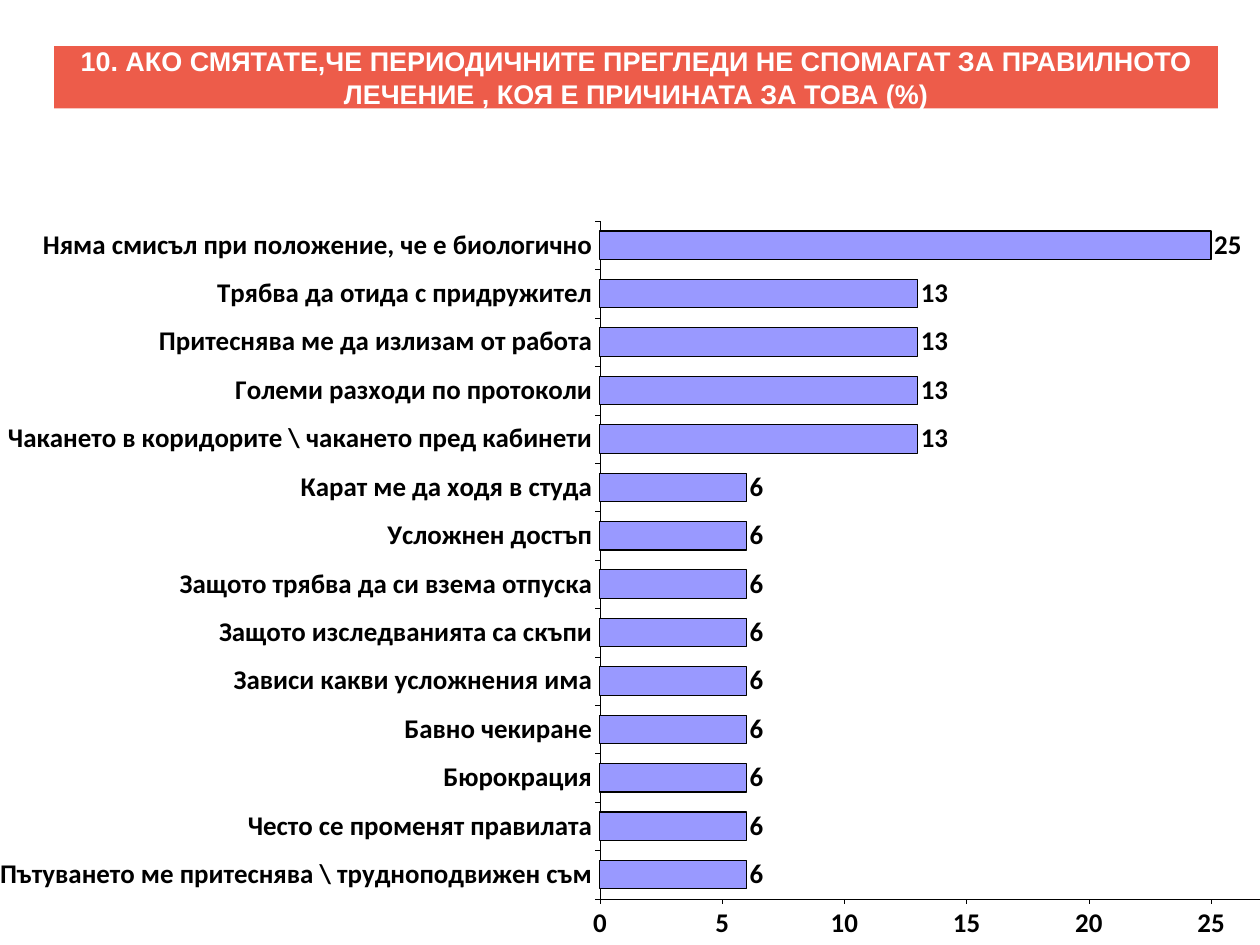
from lxml import etree
from pptx import Presentation
from pptx.chart.data import CategoryChartData
from pptx.dml.color import RGBColor
from pptx.enum.chart import XL_CHART_TYPE, XL_LABEL_POSITION, XL_TICK_MARK
from pptx.enum.shapes import MSO_SHAPE
from pptx.enum.text import MSO_ANCHOR, PP_ALIGN
from pptx.oxml.ns import qn
from pptx.util import Inches, Pt

BAR_CLUSTERED = XL_CHART_TYPE.BAR_CLUSTERED
OUTSIDE_END = XL_LABEL_POSITION.OUTSIDE_END
TICK_OUTSIDE = XL_TICK_MARK.OUTSIDE
TICK_NONE = XL_TICK_MARK.NONE
RECTANGLE = MSO_SHAPE.RECTANGLE
MIDDLE = MSO_ANCHOR.MIDDLE
CENTER = PP_ALIGN.CENTER

TITLE = ("10. АКО СМЯТАТЕ,ЧЕ ПЕРИОДИЧНИТЕ ПРЕГЛЕДИ НЕ СПОМАГАТ ЗА ПРАВИЛНОТО "
         "ЛЕЧЕНИЕ , КОЯ Е ПРИЧИНАТА ЗА ТОВА (%)")
REASONS = [
    ("Пътуването ме притеснява \\ трудноподвижен съм", 6),
    ("Често се променят правилата", 6),
    ("Бюрокрация", 6),
    ("Бавно чекиране", 6),
    ("Зависи какви усложнения има", 6),
    ("Защото изследванията са скъпи", 6),
    ("Защото трябва да си взема отпуска", 6),
    ("Усложнен достъп", 6),
    ("Карат ме да ходя в студа", 6),
    ("Чакането в коридорите \\ чакането пред кабинети", 13),
    ("Големи разходи по протоколи", 13),
    ("Притеснява ме да излизам от работа", 13),
    ("Трябва да отида с придружител", 13),
    ("Няма смисъл при положение, че е биологично", 25),
]


def color(hex_text):
    """Return the colour for a hex string."""
    return RGBColor.from_string(hex_text)


def format_font(font, name, size, hex_text, bold=True):
    """Set the typeface, size, colour and weight of a font."""
    font.name = name
    font.size = Pt(size)
    font.bold = bold
    font.color.rgb = color(hex_text)


def write_text(para, text, align=CENTER, **font_format):
    """Add text to a paragraph with the given format."""
    para.alignment = align
    span = para.add_run()
    span.text = text
    format_font(span.font, **font_format)


def set_line(line, hex_text, width):
    """Give a line a solid colour and a width in points."""
    line.color.rgb = color(hex_text)
    line.width = Pt(width)


def set_plot_layout(chart, **fractions):
    """Fix the inner plot area as fractions of the chart."""
    plot_area = chart.plots[0]._element.getparent()
    for old_layout in plot_area.findall(qn("c:layout")):
        plot_area.remove(old_layout)
    layout = etree.Element(qn("c:layout"))
    manual = etree.SubElement(layout, qn("c:manualLayout"))
    settings = {"layoutTarget": "inner", "xMode": "edge", "yMode": "edge", **fractions}
    for tag, value in settings.items():
        etree.SubElement(manual, qn("c:" + tag)).set("val", str(value))
    plot_area.insert(0, layout)


def style_axis(axis):
    """Give an axis a thin black line with outer ticks and no grid."""
    axis.has_major_gridlines = False
    axis.major_tick_mark = TICK_OUTSIDE
    axis.minor_tick_mark = TICK_NONE
    set_line(axis.format.line, "000000", 0.25)
    format_font(axis.tick_labels.font, "Calibri", 24, "000000")


def add_title_band(page, left, top, width, height):
    """Add the coloured band that holds the question."""
    band = page.shapes.add_shape(
        RECTANGLE, Inches(left), Inches(top), Inches(width), Inches(height))
    band.shadow.inherit = False
    band.fill.solid()
    band.fill.fore_color.rgb = color("ED5C4A")
    band.line.fill.background()
    frame = band.text_frame
    frame.word_wrap = True
    frame.vertical_anchor = MIDDLE
    write_text(frame.paragraphs[0], TITLE, name="Arial", size=24, hex_text="FFFFFF")


def add_reason_chart(page, left, top, width, height):
    """Add the bar chart of reasons."""
    data = CategoryChartData()
    data.categories = [reason for reason, share in REASONS]
    data.add_series("Series 1", [share for reason, share in REASONS])
    chart = page.shapes.add_chart(
        BAR_CLUSTERED, Inches(left), Inches(top), Inches(width), Inches(height), data).chart
    chart.has_title = False
    chart.has_legend = False
    format_font(chart.font, "Calibri", 24, "000000")
    set_plot_layout(chart, x=0.39, y=0.128, w=0.479, h=0.804)
    style_axis(chart.category_axis)
    style_axis(chart.value_axis)
    chart.value_axis.minimum_scale = 0
    chart.value_axis.maximum_scale = 30
    chart.value_axis.major_unit = 5

    plot = chart.plots[0]
    plot.gap_width = 70
    plot.vary_by_categories = False
    bars = plot.series[0]
    bars.format.fill.solid()
    bars.format.fill.fore_color.rgb = color("9999FF")
    set_line(bars.format.line, "000000", 1.04)
    labels = bars.data_labels
    labels.show_value = True
    labels.position = OUTSIDE_END
    format_font(labels.font, "Calibri", 24, "000000")


def main():
    """Build the slide and save the deck."""
    deck = Presentation()
    deck.slide_width = Inches(15.59)
    deck.slide_height = Inches(11.69)
    page = deck.slides.add_slide(deck.slide_layouts[6])
    add_reason_chart(page, 0, 1.4, 18.98, 10.43)
    add_title_band(page, 0.67, 0.57, 14.4, 0.77)
    deck.save("out.pptx")


if __name__ == "__main__":
    main()
